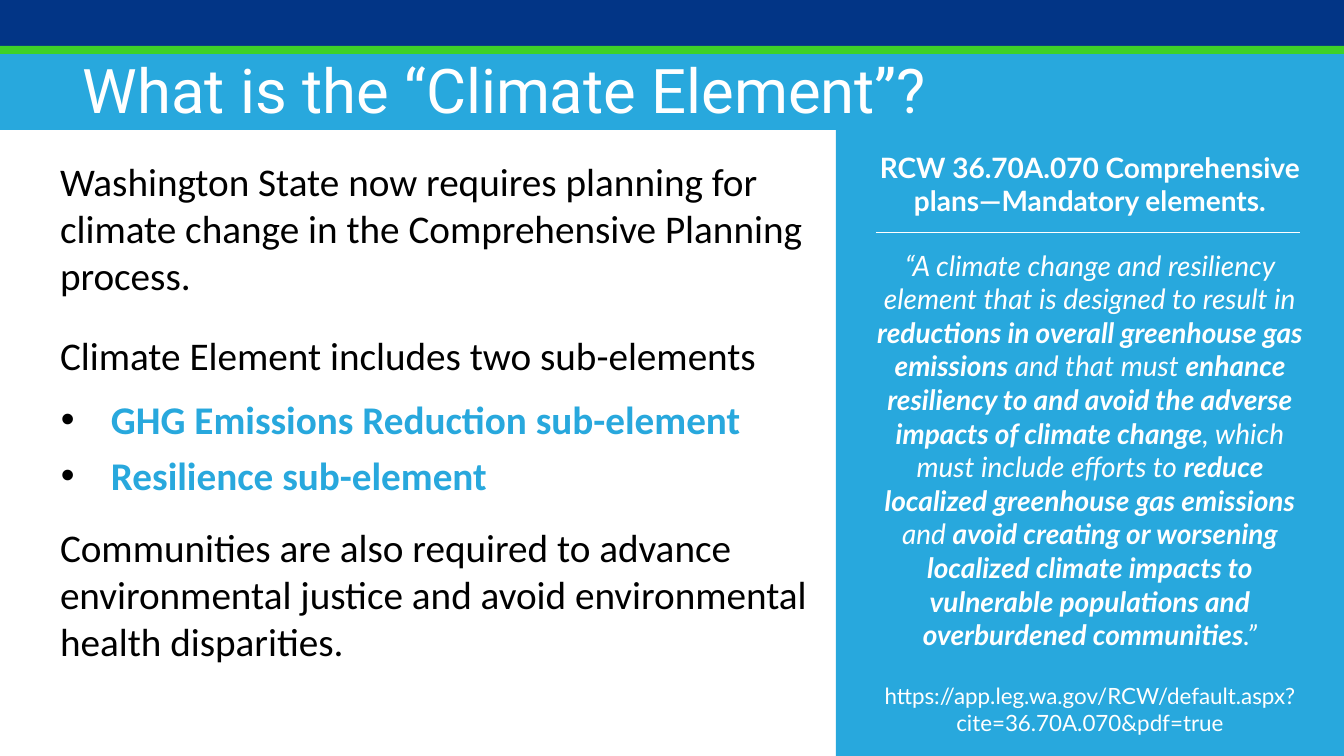
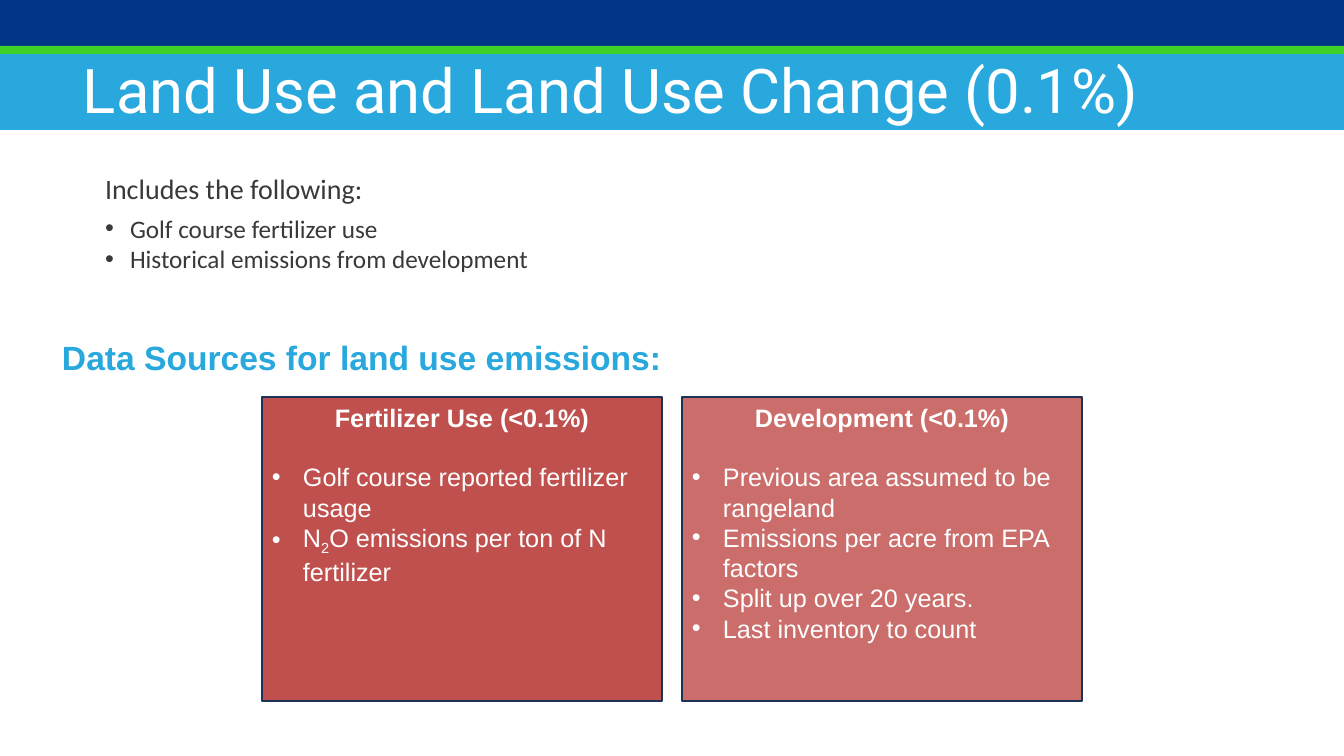
from collections import namedtuple
from dataclasses import dataclass

from lxml import etree
from pptx import Presentation
from pptx import util as u
from pptx.dml.color import RGBColor
from pptx.enum import shapes, text
from pptx.oxml import ns

Box = namedtuple("Box", "x y w h")


@dataclass(frozen=True)
class Theme:
    navy: str = "023586"
    green: str = "3ED128"
    sky: str = "28A8DD"
    brick: str = "C0504D"
    rose: str = "CB6D6B"
    edge: str = "1E3256"
    white: str = "FFFFFF"
    black: str = "000000"
    gray: str = "3B3838"
    title_font: str = "Roboto"
    body_font: str = "Calibri"
    panel_font: str = "Lato"
    card_font: str = "Arial"
    title: int = 44
    lead: int = 28
    heading: int = 24
    text: int = 20
    item: int = 18
    link: int = 16


THEME = Theme()
PAGE = Box(0, 0, 1344, 756)
TITLE = Box(73, 46, 1214, 85)
BANDS = ((0, 46, THEME.navy), (46, 8, THEME.green), (54, 76, THEME.sky))
LEFT, CENTER = text.PP_ALIGN.LEFT, text.PP_ALIGN.CENTER


# Helpers
def px(value):
    return round(value * 12192000 / PAGE.w)


def place(shape, box):
    for name, value in zip(("left", "top", "width", "height"), box):
        setattr(shape, name, px(value))


def style_font(font, **values):
    color = values.pop("color", None)
    if color:
        font.color.rgb = RGBColor.from_string(color)
    for name, value in values.items():
        setattr(font, name, u.Pt(value) if name == "size" else value)


def set_indent(para, margin=0, bullet=False, hang=0):
    props = para._p.get_or_add_pPr()
    props.set("marL", str(px(margin)))
    props.set("indent", str(-px(hang)))
    if not bullet:
        etree.SubElement(props, ns.qn("a:buNone"))
        return
    color = etree.SubElement(props, ns.qn("a:buClr"))
    etree.SubElement(color, ns.qn("a:srgbClr")).set("val", bullet)
    etree.SubElement(props, ns.qn("a:buFont")).set("typeface", "Arial")
    etree.SubElement(props, ns.qn("a:buChar")).set("char", "•")


def write(shape, paras, font, anchor=text.MSO_ANCHOR.TOP, inset=10):
    """Each paragraph is (runs, format); each run is (words, font changes)."""
    frame = shape.text_frame
    settings = dict(word_wrap=True, auto_size=text.MSO_AUTO_SIZE.NONE,
                    vertical_anchor=anchor,
                    margin_left=px(inset), margin_right=px(inset),
                    margin_top=px(5), margin_bottom=px(5))
    for name, value in settings.items():
        setattr(frame, name, value)
    for number, (runs, form) in enumerate(paras):
        para = frame.add_paragraph() if number else frame.paragraphs[0]
        para.alignment = form.get("align", LEFT)
        para.space_before = u.Pt(form.get("before", 0))
        para.space_after = u.Pt(form.get("after", 0))
        set_indent(para, **form.get("indent", {}))
        for words, changes in [(runs, {})] if isinstance(runs, str) else runs:
            values = {**font, **form.get("font", {}), **changes}
            baseline = values.pop("baseline", None)
            span = para.add_run()
            span.text = words
            style_font(span.font, **values)
            if baseline:
                span._r.get_or_add_rPr().set("baseline", str(baseline))


def add_rect(page, box, fill, line=None):
    rect = page.shapes.add_shape(shapes.MSO_SHAPE.RECTANGLE, *map(px, box))
    rect.shadow.inherit = False
    rect.fill.solid()
    rect.fill.fore_color.rgb = RGBColor.from_string(fill)
    if line:
        rect.line.color.rgb = RGBColor.from_string(line)
        rect.line.width = u.Pt(1)
    else:
        rect.line.fill.background()
    return rect


def add_rule(page, x, y, width):
    rule = page.shapes.add_connector(
        shapes.MSO_CONNECTOR.STRAIGHT, *map(px, (x, y, x + width, y)))
    rule.line.color.rgb = RGBColor.from_string(THEME.white)
    rule.line.width = u.Pt(0.5)
    etree.SubElement(rule.element.spPr, ns.qn("a:effectLst"))


# Shared frame: bands behind the title
def add_page(deck, title):
    page = deck.slides.add_slide(deck.slide_layouts[1])
    for index, (top, height, color) in enumerate(BANDS):
        band = add_rect(page, Box(0, top, PAGE.w, height), color)
        page.shapes.element.insert(2 + index, band.element)
    place(page.shapes.title, TITLE)
    write(page.shapes.title, [(title, {})],
          dict(name=THEME.title_font, size=THEME.title, color=THEME.white),
          anchor=text.MSO_ANCHOR.MIDDLE)
    return page


def fill_body(page, box, paras, **font):
    body = page.placeholders[1]
    place(body, box)
    write(body, paras, dict(name=THEME.body_font, **font))


# Quoted law in a side panel
def add_law_panel(page, box, heading, quote, link):
    panel = add_rect(page, box, THEME.sky)
    runs = [(words, dict(bold=number % 2 == 1))
            for number, words in enumerate(quote)]
    write(panel, [
        (heading, dict(align=CENTER, after=22, font=dict(bold=True))),
        (runs, dict(align=CENTER, after=22, font=dict(italic=True))),
        (link, dict(align=CENTER, font=dict(size=THEME.link))),
    ], dict(name=THEME.panel_font, size=THEME.text, color=THEME.white),
        anchor=text.MSO_ANCHOR.MIDDLE, inset=30)
    add_rule(page, box.x + 40, box.y + 102, 424)


# Row of equal cards
def add_cards(page, box, gap, cards):
    width = (box.w - gap * (len(cards) - 1)) / len(cards)
    bullet = dict(indent=dict(margin=31, hang=31, bullet=THEME.white))
    for column, (heading, fill, items) in enumerate(cards):
        spot = Box(box.x + column * (width + gap), box.y, width, box.h)
        card = add_rect(page, spot, fill, THEME.edge)
        head = (heading, dict(align=CENTER, after=21, font=dict(bold=True)))
        write(card, [head] + [(item, bullet) for item in items],
              dict(name=THEME.card_font, size=THEME.item, color=THEME.white))


# Slides
def build_climate_page(deck):
    page = add_page(deck, "What is the “Climate Element”?")
    plain = dict(before=12, after=12, indent=dict(margin=50))
    point = dict(after=6, font=dict(bold=True, color=THEME.sky),
                 indent=dict(margin=101, hang=50, bullet=THEME.black))
    fill_body(page, Box(0, 152, 825, 522), [
        ("Washington State now requires planning for climate change in the "
         "Comprehensive Planning process.", plain),
        ("Climate Element includes two sub-elements", plain),
        ("GHG Emissions Reduction sub-element", point),
        ("Resilience sub-element", point),
        ("Communities are also required to advance environmental justice "
         "and avoid environmental health disparities.", plain),
    ], size=THEME.lead, color=THEME.black)
    add_law_panel(
        page, Box(836, 130, 508, 626),
        "RCW 36.70A.070 Comprehensive plans—Mandatory elements.",
        # Every second part is bold
        ["“A climate change and resiliency element that is designed to "
         "result in ",
         "reductions in overall greenhouse gas emissions",
         " and that must ",
         "enhance resiliency to and avoid the adverse impacts of climate "
         "change",
         ", which must include efforts to ",
         "reduce localized greenhouse gas emissions",
         " and ",
         "avoid creating or worsening localized climate impacts to "
         "vulnerable populations and overburdened communities",
         ".”"],
        "https://app.leg.wa.gov/RCW/default.aspx?cite=36.70A.070&pdf=true")


def build_land_use_page(deck):
    page = add_page(deck, "Land Use and Land Use Change (0.1%)")
    point = dict(font=dict(size=THEME.item),
                 indent=dict(margin=25, hang=25, bullet=THEME.gray))
    fill_body(page, Box(95, 166, 733, 152), [
        ("Includes the following:", dict(after=6)),
        ("Golf course fertilizer use", point),
        ("Historical emissions from development", point),
    ], size=THEME.text, color=THEME.gray)
    sources = page.shapes.add_textbox(*map(px, Box(52, 332, 1191, 52)))
    write(sources, [("Data Sources for land use emissions:", {})],
          dict(name=THEME.card_font, size=THEME.heading, color=THEME.sky,
               bold=True))
    nitrous = [("N", {}), ("2", dict(baseline=-25000)),
               ("O emissions per ton of N fertilizer", {})]
    add_cards(page, Box(262, 397, 820, 304), 20, [
        ("Fertilizer Use (<0.1%)", THEME.brick,
         ["Golf course reported fertilizer usage", nitrous]),
        ("Development (<0.1%)", THEME.rose,
         ["Previous area assumed to be rangeland",
          "Emissions per acre from EPA factors",
          "Split up over 20 years.",
          "Last inventory to count"]),
    ])


def main():
    deck = Presentation()
    deck.slide_width, deck.slide_height = px(PAGE.w), px(PAGE.h)
    build_climate_page(deck)
    build_land_use_page(deck)
    deck.save("out.pptx")


if __name__ == "__main__":
    main()
